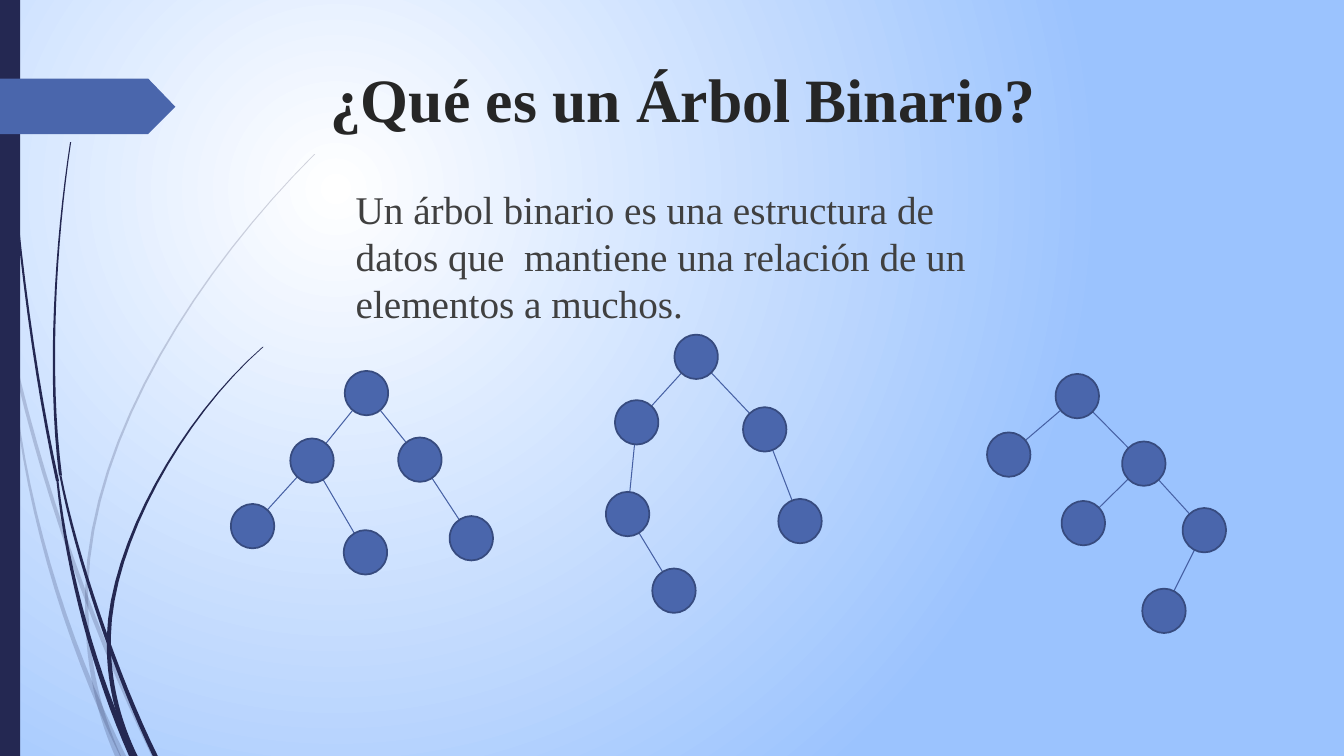
"""Build the slide that explains what a binary tree is."""
from dataclasses import dataclass
from math import dist

from lxml import etree
from pptx import Presentation
from pptx.dml.color import RGBColor
from pptx.enum.shapes import MSO_CONNECTOR, MSO_SHAPE
from pptx.enum.text import MSO_ANCHOR, PP_ALIGN
from pptx.oxml.ns import qn
from pptx.util import Inches, Pt


@dataclass(frozen=True)
class Theme:
    navy: RGBColor = RGBColor.from_string("242852")
    blue: RGBColor = RGBColor.from_string("4A66AC")
    rim: RGBColor = RGBColor.from_string("374B7F")
    branch: RGBColor = RGBColor.from_string("4761A4")
    title: RGBColor = RGBColor.from_string("262626")
    body: RGBColor = RGBColor.from_string("404040")
    glow: RGBColor = RGBColor.from_string("FFFFFF")
    sky: RGBColor = RGBColor.from_string("9BC3FE")
    font: str = "Times New Roman"
    title_size: Pt = Pt(44)
    body_size: Pt = Pt(28)


theme = Theme()
presentation = Presentation()
presentation.slide_width, presentation.slide_height = Inches(13.33), Inches(7.5)
slide = presentation.slides.add_slide(presentation.slide_layouts[6])

background = slide.background.fill
background.gradient()
for stop, color in zip(background.gradient_stops, (theme.glow, theme.sky)):
    stop.color.rgb = color
gradient = slide.element.find(".//" + qn("a:gradFill"))
gradient.remove(gradient.find(qn("a:lin")))
circle = etree.SubElement(gradient, qn("a:path"), path="circle")
etree.SubElement(circle, qn("a:fillToRect"), l="50000", t="50000", r="100000", b="100000")


def paint(shape, color):
    """Give a shape a plain fill with no outline and no shadow."""
    shape.shadow.inherit = False
    shape.fill.solid()
    shape.fill.fore_color.rgb = color
    shape.line.fill.background()


def add_outline(points, color):
    """Draw a closed, filled outline through points given in inches."""
    corners = [(Inches(x), Inches(y)) for x, y in points]
    builder = slide.shapes.build_freeform(*corners[0])
    builder.add_line_segments(corners[1:], close=True)
    shape = builder.convert_to_shape()
    paint(shape, color)
    return shape


pale_stems = [
    ((0, 2.9), (0.3, 4.5), (0.85, 6.1), (1.53, 7.5), 0.03, 0.05),
    ((0.11, 3.5), (0.2, 4.9), (0.65, 6.35), (1.22, 7.5), 0.01, 0.06),
    ((3.12, 1.53), (2, 2.65), (0.9, 4.3), (0.86, 5.84), 0.01, 0.03),
    ((0.86, 5.84), (0.85, 6.5), (0.95, 7), (1.17, 7.5), 0.03, 0.06),
]
dark_stems = [
    ((0.04, 0), (0.06, 1.6), (0.29, 3.5), (0.57, 4.77), 0.01, 0.03),
    ((0.6, 4.72), (0.75, 5.5), (1.15, 6.7), (1.54, 7.5), 0.02, 0.05),
    ((0.57, 4.77), (0.67, 5.7), (0.95, 6.7), (1.31, 7.5), 0.02, 0.06),
    ((0.7, 1.41), (0.55, 2.4), (0.47, 3.7), (0.6, 4.72), 0.01, 0.03),
    ((2.61, 3.44), (1.8, 4.15), (1.1, 5.4), (1.08, 6.32), 0.01, 0.04),
    ((1.08, 6.32), (1.07, 6.75), (1.17, 7.15), (1.34, 7.5), 0.04, 0.05),
]
steps = 16
for stem in pale_stems + dark_stems:
    *knots, start_width, end_width = stem
    left_edge, right_edge = [], []
    for step in range(steps + 1):
        t = step / steps
        weights = ((1 - t) ** 3, 3 * t * (1 - t) ** 2, 3 * t * t * (1 - t), t ** 3)
        x, y = (sum(w * knot[axis] for w, knot in zip(weights, knots)) for axis in (0, 1))
        half = (start_width + (end_width - start_width) * t) / 2
        left_edge.append((x - half, y))
        right_edge.append((x + half, y))
    shape = add_outline(left_edge + right_edge[::-1], theme.navy)
    if stem in pale_stems:
        fill_color = shape.element.spPr.find(".//" + qn("a:srgbClr"))
        etree.SubElement(fill_color, qn("a:alpha"), val="20000")

side_bar = slide.shapes.add_shape(MSO_SHAPE.RECTANGLE, 0, 0, Inches(0.2), Inches(7.5))
paint(side_bar, theme.navy)
add_outline([(0, 0.78), (1.47, 0.78), (1.74, 1.06), (1.47, 1.33), (0, 1.33)], theme.blue)

texts = [
    ("¿Qué es un Árbol Binario?", (1.9, 0.56, 9.75, 1.4),
     theme.title_size, theme.title, True, PP_ALIGN.CENTER, 0),
    ("Un árbol binario es una estructura de datos que  mantiene una relación de un elementos a muchos.",
     (3.43, 1.79, 6.8, 1.15), theme.body_size, theme.body, False, PP_ALIGN.LEFT, 10),
]
for text, box, size, color, bold, alignment, space_before in texts:
    frame = slide.shapes.add_textbox(*map(Inches, box)).text_frame
    frame.word_wrap = True
    frame.vertical_anchor = MSO_ANCHOR.TOP
    paragraph = frame.paragraphs[0]
    paragraph.alignment = alignment
    paragraph.space_before = Pt(space_before)
    run = paragraph.add_run()
    run.text = text
    run.font.name, run.font.size, run.font.bold = theme.font, size, bold
    run.font.color.rgb = color

trees = [
    ([(3.42, 3.68), (2.88, 4.35), (3.95, 4.34), (2.29, 5), (3.41, 5.26), (4.46, 5.12)],
     [(0, 1), (0, 2), (1, 3), (1, 4), (2, 5)]),
    ([(6.69, 3.32), (6.1, 3.97), (7.37, 4.04), (6.01, 4.88), (7.72, 4.95), (6.47, 5.64)],
     [(0, 1), (0, 2), (1, 3), (2, 4), (3, 5)]),
    ([(10.47, 3.71), (9.79, 4.29), (11.13, 4.38), (10.53, 4.97), (11.73, 5.04), (11.33, 5.84)],
     [(0, 1), (0, 2), (2, 3), (2, 4), (4, 5)]),
]
node_width, node_height = 0.43, 0.44
for nodes, branches in trees:
    centers = [(left + node_width / 2, top + node_height / 2) for left, top in nodes]
    for parent, child in branches:
        (x1, y1), (x2, y2) = centers[parent], centers[child]
        inset = node_height / 2 / dist(centers[parent], centers[child])
        dx, dy = (x2 - x1) * inset, (y2 - y1) * inset
        ends = (x1 + dx, y1 + dy, x2 - dx, y2 - dy)
        branch = slide.shapes.add_connector(MSO_CONNECTOR.STRAIGHT, *map(Inches, ends))
        branch.line.color.rgb = theme.branch
        branch.line.width = Pt(0.75)
        etree.SubElement(branch.element.spPr, qn("a:effectLst"))
    for left, top in nodes:
        box = (left, top, node_width, node_height)
        node = slide.shapes.add_shape(MSO_SHAPE.FLOWCHART_CONNECTOR, *map(Inches, box))
        paint(node, theme.blue)
        node.line.color.rgb = theme.rim
        node.line.width = Pt(1.25)

presentation.save("out.pptx")
